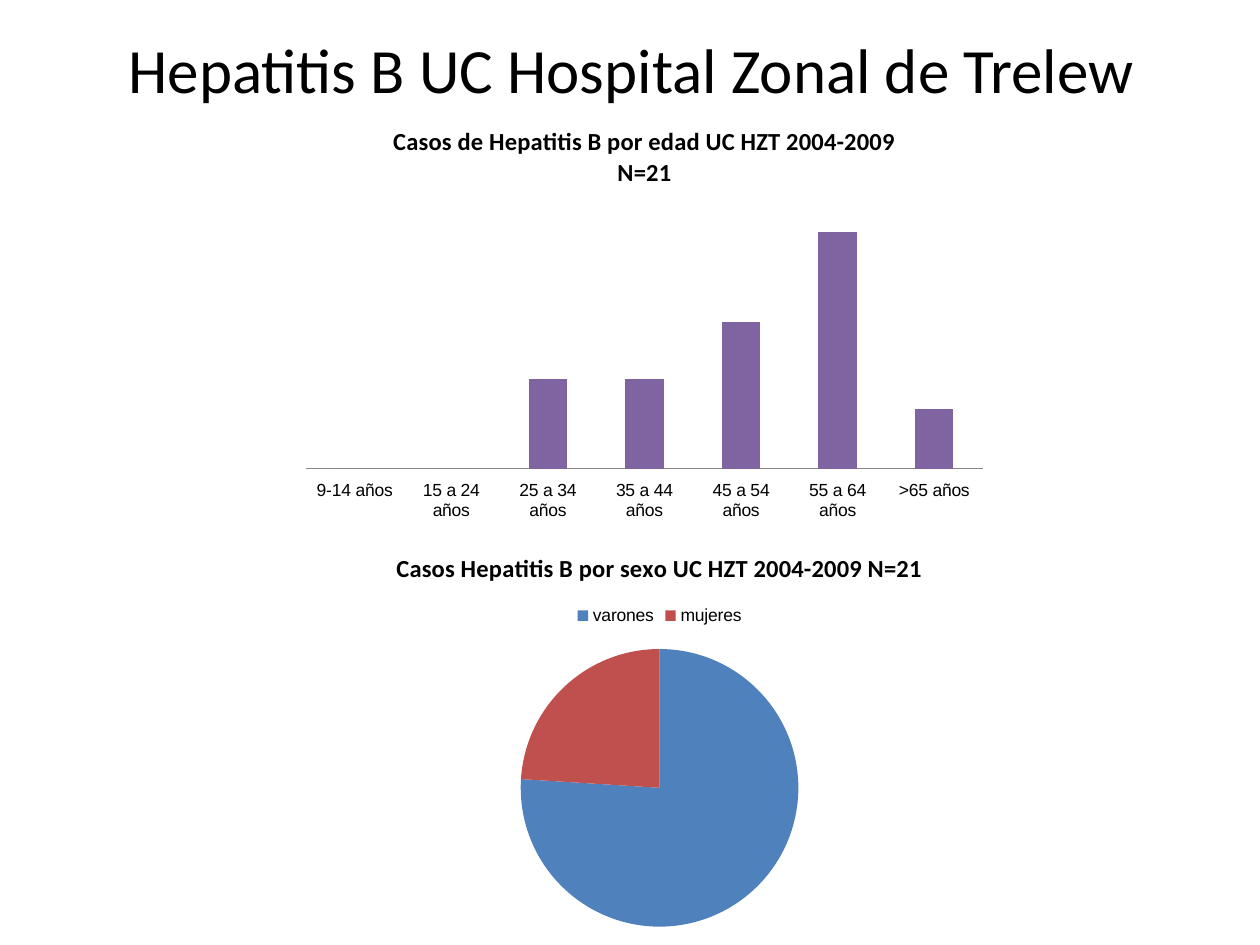
from dataclasses import dataclass

from lxml import etree
from pptx import Presentation
from pptx.chart.data import CategoryChartData
from pptx.dml.color import RGBColor
from pptx.enum.chart import XL_CHART_TYPE, XL_LEGEND_POSITION, XL_TICK_LABEL_POSITION, XL_TICK_MARK
from pptx.enum.text import MSO_ANCHOR, PP_ALIGN
from pptx.oxml import parse_xml
from pptx.oxml.ns import nsdecls, qn
from pptx.util import Inches, Pt

COLUMN = XL_CHART_TYPE.COLUMN_CLUSTERED
PIE = XL_CHART_TYPE.PIE
LEGEND_TOP = XL_LEGEND_POSITION.TOP
NO_TICK = XL_TICK_MARK.NONE
LABELS_LOW = XL_TICK_LABEL_POSITION.LOW
MIDDLE = MSO_ANCHOR.MIDDLE
CENTER = PP_ALIGN.CENTER
TITLE_ONLY = 5


@dataclass(frozen=True)
class Theme:
    heading_font: str = "Calibri"
    label_font: str = "Arial"
    title_size: float = 36
    chart_title_size: float = 14
    label_size: float = 10
    text: str = "000000"
    background: str = "FFFFFF"
    axis: str = "878787"
    age: str = "8064A2"
    men: str = "4F81BD"
    women: str = "C0504D"


THEME = Theme()


def color(value):
    return RGBColor.from_string(value)


def format_font(font, name, size, bold=False):
    font.name = name
    font.size = Pt(size)
    font.bold = bold
    font.color.rgb = color(THEME.text)


def add_title(slide, text, box):
    title = slide.shapes.title
    title.left, title.top, title.width, title.height = map(Inches, box)
    frame = title.text_frame
    frame.word_wrap = True
    frame.vertical_anchor = MIDDLE
    paragraph = frame.paragraphs[0]
    paragraph.alignment = CENTER
    run = paragraph.add_run()
    run.text = text
    format_font(run.font, THEME.heading_font, THEME.title_size)


def set_chart_title(chart, lines):
    chart.has_title = True
    title = chart.chart_title
    frame = title.text_frame
    for index, line in enumerate(lines):
        paragraph = frame.add_paragraph() if index else frame.paragraphs[0]
        run = paragraph.add_run()
        run.text = line
        format_font(run.font, THEME.heading_font, THEME.chart_title_size, True)
    for overlay in title._element.findall(qn("c:overlay")):
        overlay.set("val", "1")


def set_plot_area(chart, shares):
    plot_area = chart._chartSpace.chart.plotArea
    for old_layout in plot_area.findall(qn("c:layout")):
        plot_area.remove(old_layout)
    layout = parse_xml(f"<c:layout {nsdecls('c')}><c:manualLayout/></c:layout>")
    manual = layout[0]
    settings = [("layoutTarget", "inner"), ("xMode", "edge"), ("yMode", "edge")]
    for name, value in settings + list(zip("xywh", shares)):
        etree.SubElement(manual, qn(f"c:{name}")).set("val", str(value))
    plot_area.insert(0, layout)
    plot_area.append(parse_xml(
        f"<c:spPr {nsdecls('c', 'a')}><a:solidFill>"
        f'<a:srgbClr val="{THEME.background}"/></a:solidFill></c:spPr>'))


def add_chart(slide, kind, box, title_lines, values, plot_shares):
    data = CategoryChartData()
    data.categories = list(values)
    data.add_series("Series 1", list(values.values()))
    chart = slide.shapes.add_chart(kind, *map(Inches, box), data).chart
    format_font(chart.font, THEME.label_font, THEME.label_size)
    chart.has_legend = False
    set_chart_title(chart, title_lines)
    set_plot_area(chart, plot_shares)
    return chart


def fill(element, value):
    element.format.fill.solid()
    element.format.fill.fore_color.rgb = color(value)


def style_columns(chart):
    plot = chart.plots[0]
    plot.vary_by_categories = False
    plot.gap_width = 150
    fill(plot.series[0], THEME.age)
    value_axis = chart.value_axis
    value_axis.minimum_scale = 0
    value_axis.maximum_scale = 120
    value_axis.has_major_gridlines = False
    value_axis.visible = False
    category_axis = chart.category_axis
    category_axis.major_tick_mark = NO_TICK
    category_axis.minor_tick_mark = NO_TICK
    category_axis.tick_label_position = LABELS_LOW
    category_axis.format.line.color.rgb = color(THEME.axis)
    category_axis.format.line.width = Pt(0.75)


def style_pie(chart):
    plot = chart.plots[0]
    plot.vary_by_categories = True
    for index, value in enumerate((THEME.men, THEME.women)):
        fill(plot.series[0].points[index], value)
    chart.has_legend = True
    chart.legend.position = LEGEND_TOP
    chart.legend.include_in_layout = True
    format_font(chart.legend.font, THEME.label_font, THEME.label_size)


def main():
    presentation = Presentation()
    presentation.slide_width = Inches(10)
    presentation.slide_height = Inches(7.5)
    slide = presentation.slides.add_slide(presentation.slide_layouts[TITLE_ONLY])
    add_title(slide, "Hepatitis B UC Hospital Zonal de Trelew", (0.51, 0.01, 9, 1.06))

    cases_by_age = {
        "9-14 años": 0, "15 a 24 años": 0, "25 a 34 años": 38, "35 a 44 años": 38,
        "45 a 54 años": 62, "55 a 64 años": 100, ">65 años": 25,
    }
    age_chart = add_chart(
        slide, COLUMN, (2.32, 0.84, 5.59, 3.31),
        ["Casos de Hepatitis B por edad UC HZT 2004-2009", "N=21"],
        cases_by_age, (0.02, 0.19, 0.96, 0.68))
    style_columns(age_chart)

    sex_chart = add_chart(
        slide, PIE, (2.48, 4.22, 5.51, 3.28),
        ["Casos Hepatitis B por sexo UC HZT 2004-2009 N=21"],
        {"varones": 76, "mujeres": 24}, (0.3, 0.28, 0.4, 0.68))
    style_pie(sex_chart)

    presentation.save("out.pptx")


if __name__ == "__main__":
    main()
